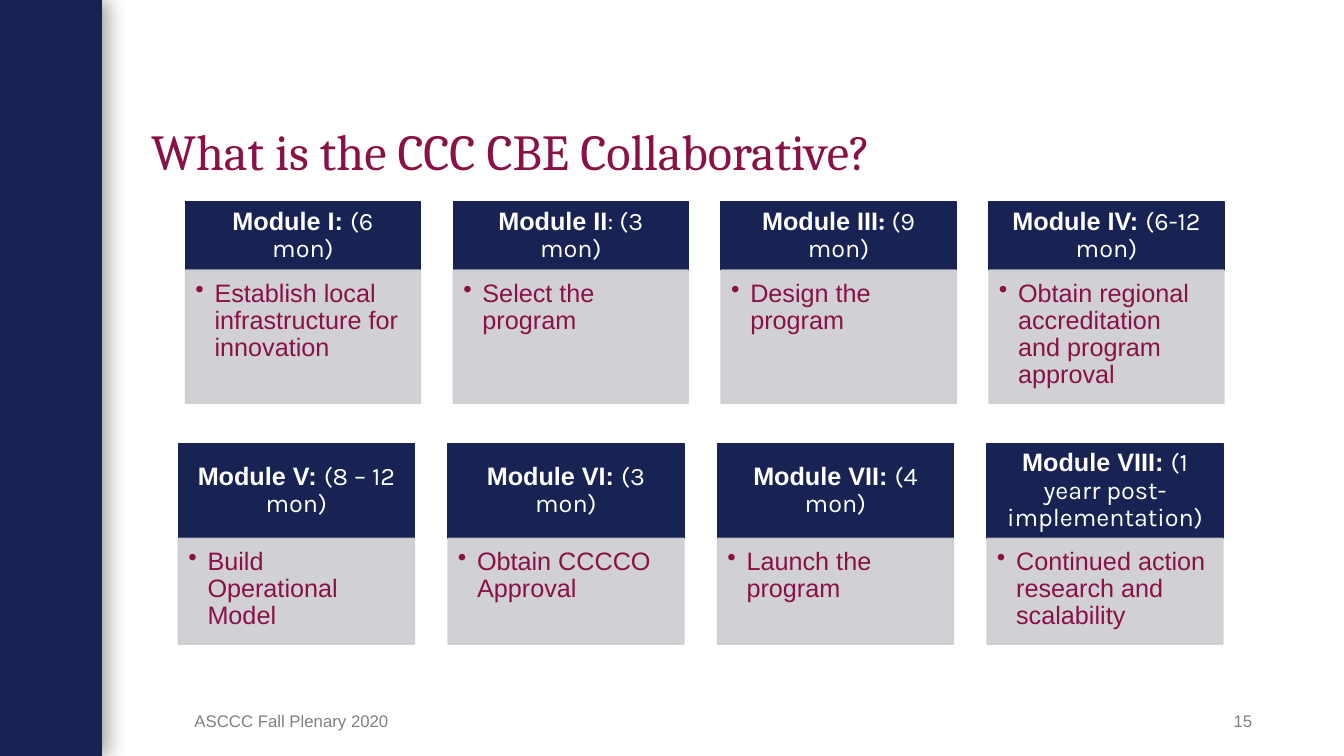
from lxml.etree import SubElement
from pptx import Presentation
from pptx.dml.color import RGBColor
from pptx.enum.shapes import MSO_SHAPE
from pptx.enum.text import MSO_ANCHOR, MSO_AUTO_SIZE, PP_ALIGN
from pptx.oxml.ns import qn
from pptx.util import Inches, Pt

NAVY = RGBColor(0x18, 0x23, 0x54)
MAROON = RGBColor(0x89, 0x11, 0x46)
SILVER = RGBColor(0xCC, 0xCD, 0xD1)
GRAY = RGBColor(0x80, 0x80, 0x80)
WHITE = RGBColor(0xFF, 0xFF, 0xFF)

# Content
TITLE = "What is the CCC CBE Collaborative?"
FOOTER = "ASCCC Fall Plenary 2020"
PAGE = "15"
# Each module: heading runs as (text, font, bold), then the task
FIRST_MODULES = [
    ([("Module I: ", "Arial", True), ("(6 mon)", "Karla", False)],
     "Establish local infrastructure for innovation"),
    ([("Module II", "Arial", True), (": (3 mon)", "Karla", False)],
     "Select the program"),
    ([("Module III", "Arial", True), (": ", "Karla", True), ("(9 mon)", "Karla", False)],
     "Design the program"),
    ([("Module IV: ", "Arial", True), ("(6-12 mon)", "Karla", False)],
     "Obtain regional accreditation and program approval"),
]
LAST_MODULES = [
    ([("Module V: ", "Arial", True), ("(8 – 12 mon)", "Karla", False)],
     "Build Operational Model"),
    ([("Module VI: ", "Arial", True), ("(3 mon)", "Karla", False)],
     "Obtain CCCCO Approval"),
    ([("Module VII: ", "Arial", True), ("(4 mon)", "Karla", False)],
     "Launch the program"),
    ([("Module VIII: ", "Arial", True), ("(1 yearr post-implementation)", "Karla", False)],
     "Continued action research and scalability"),
]
# modules, first left, last left, top, width, heading height, task height
ROWS = [
    (FIRST_MODULES, 1.84, 9.81, 2.0, 2.33, 0.68, 1.32),
    (LAST_MODULES, 1.77, 9.79, 4.4, 2.34, 0.94, 1.05),
]


def add_run(paragraph, text, font, size, color, bold=False):
    run = paragraph.add_run()
    run.text = text
    run.font.name = font
    run.font.size = Pt(size)
    run.font.bold = bold
    run.font.color.rgb = color


def set_margins(frame, left, top, right, bottom):
    frame.margin_left, frame.margin_top = Inches(left), Inches(top)
    frame.margin_right, frame.margin_bottom = Inches(right), Inches(bottom)


def add_panel(left, top, width, height, color):
    panel = slide.shapes.add_shape(MSO_SHAPE.RECTANGLE, Inches(left), Inches(top),
                                   Inches(width), Inches(height))
    panel.shadow.inherit = False
    panel.fill.solid()
    panel.fill.fore_color.rgb = color
    panel.line.color.rgb = color
    panel.line.width = Pt(1)
    panel.text_frame.word_wrap = True
    return panel


def add_heading(box, runs):
    frame = add_panel(*box, NAVY).text_frame
    frame.vertical_anchor = MSO_ANCHOR.MIDDLE
    set_margins(frame, 0.14, 0.08, 0.14, 0.08)
    paragraph = frame.paragraphs[0]
    paragraph.alignment = PP_ALIGN.CENTER
    paragraph.line_spacing = 0.9
    for text, font, bold in runs:
        add_run(paragraph, text, font, 18, WHITE, bold)


def add_task(box, task):
    panel = add_panel(*box, SILVER)
    # Fill and line are 90% opaque
    for color in panel._element.spPr.iter(qn("a:srgbClr")):
        SubElement(color, qn("a:alpha"), val="90000")
    frame = panel.text_frame
    frame.vertical_anchor = MSO_ANCHOR.TOP
    set_margins(frame, 0.1, 0.1, 0.14, 0.16)
    paragraph = frame.paragraphs[0]
    paragraph.alignment = PP_ALIGN.LEFT
    paragraph.line_spacing = 0.9
    props = paragraph._p.get_or_add_pPr()
    props.set("marL", str(Inches(0.19)))
    props.set("indent", str(Inches(-0.19)))
    SubElement(props, qn("a:buChar"), char="•")
    add_run(paragraph, task, "Arial", 18, MAROON)


def add_footer(left, width, text, alignment, right_margin):
    box = slide.shapes.add_textbox(Inches(left), Inches(6.95), Inches(width), Inches(0.4))
    frame = box.text_frame
    frame.word_wrap = True
    frame.vertical_anchor = MSO_ANCHOR.MIDDLE
    set_margins(frame, 0.1, 0.05, right_margin, 0.05)
    frame.paragraphs[0].alignment = alignment
    add_run(frame.paragraphs[0], text, "Arial", 12, GRAY)


prs = Presentation()
prs.slide_width, prs.slide_height = Inches(13.33), Inches(7.5)
slide = prs.slides.add_slide(prs.slide_layouts[5])

# Sidebar with a soft shadow to the right
sidebar = add_panel(0, 0, 1.01, 7.5, NAVY)
sidebar.line.fill.background()
effects = sidebar._element.spPr.find(qn("a:effectLst"))
shadow = SubElement(effects, qn("a:outerShdw"), blurRad=str(Pt(15)), dist=str(Pt(3)),
                    dir="0", algn="l", rotWithShape="0")
shadow_color = SubElement(shadow, qn("a:srgbClr"), val="000000")
SubElement(shadow_color, qn("a:alpha"), val="40000")

# Title
title = slide.shapes.title
title.left, title.top = Inches(1.4), Inches(0.4)
title.width, title.height = Inches(10.99), Inches(1.45)
title.text_frame.auto_size = MSO_AUTO_SIZE.NONE
title.text_frame.word_wrap = True
title.text_frame.vertical_anchor = MSO_ANCHOR.BOTTOM
heading = title.text_frame.paragraphs[0]
heading.alignment = PP_ALIGN.LEFT
heading.line_spacing = 0.9
add_run(heading, TITLE, "Cambria", 36, MAROON)

# Module cards
for modules, first, last, top, width, heading_height, task_height in ROWS:
    pitch = (last - first) / (len(modules) - 1)
    for column, (runs, task) in enumerate(modules):
        left = first + column * pitch
        add_heading((left, top, width, heading_height), runs)
        add_task((left, top + heading_height, width, task_height), task)

# Footer and page number
add_footer(1.83, 4.5, FOOTER, PP_ALIGN.LEFT, 0.1)
add_footer(11.42, 1, PAGE, PP_ALIGN.RIGHT, 0)

prs.save("out.pptx")
